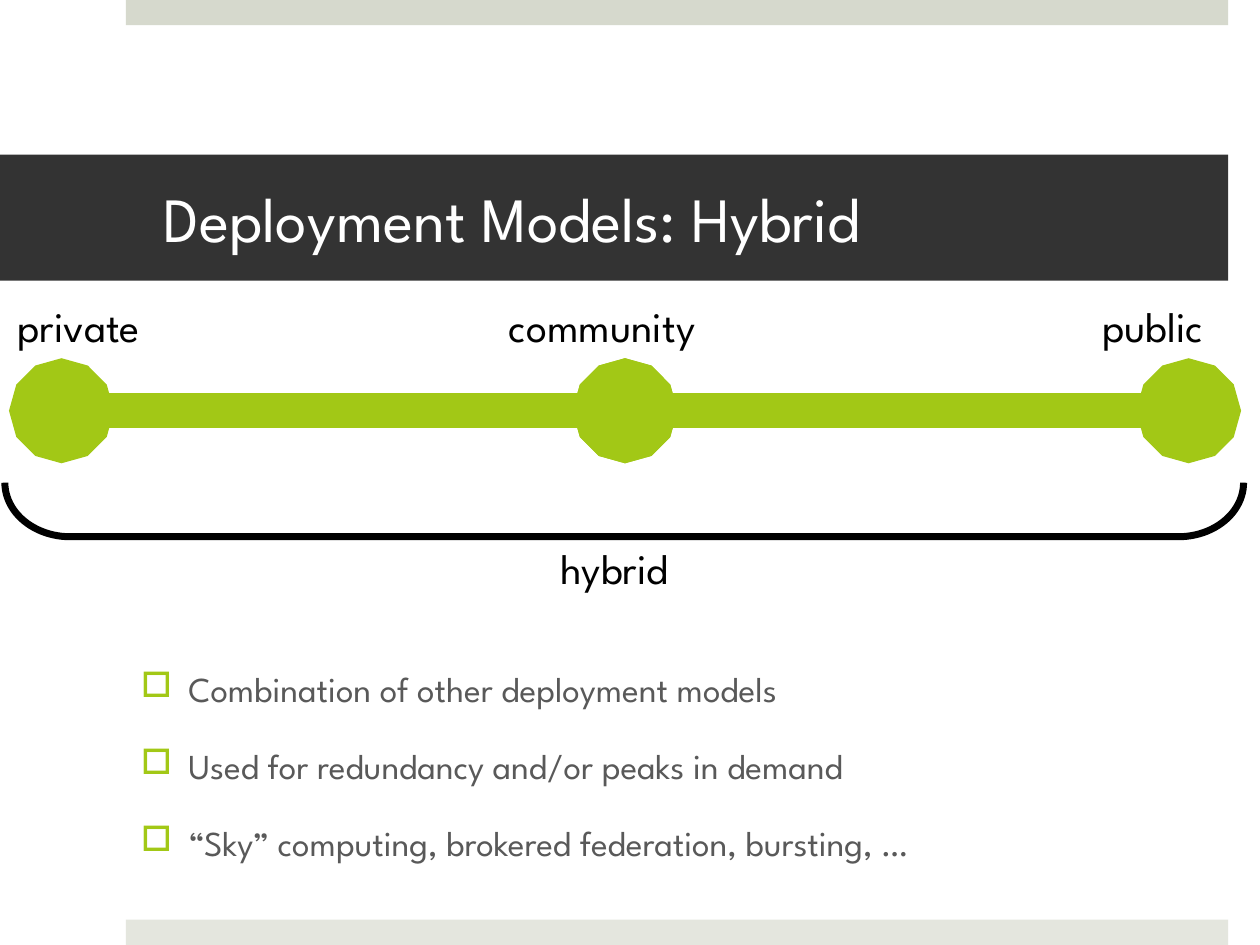
"""Build the slide on the hybrid deployment model."""
import lxml.etree
import pptx
import pptx.dml.color
import pptx.enum.shapes
import pptx.enum.text
import pptx.oxml.ns
import pptx.util

Cm = pptx.util.Cm
Pt = pptx.util.Pt
RGBColor = pptx.dml.color.RGBColor
Shape = pptx.enum.shapes.MSO_SHAPE
qn = pptx.oxml.ns.qn

GREEN = RGBColor(0xA2, 0xC8, 0x16)
DARK = RGBColor(0x33, 0x33, 0x33)
GREY = RGBColor(0x59, 0x59, 0x59)
TOP_BAR = RGBColor(0xD6, 0xD9, 0xCD)
BOTTOM_BAR = RGBColor(0xE4, 0xE6, 0xDE)
WHITE = RGBColor(0xFF, 0xFF, 0xFF)
BLACK = RGBColor(0x00, 0x00, 0x00)
FONT_NAME = "League Spartan"


def set_values(target, values):
    for name, value in values.items():
        setattr(target, name, value)


def write_text(paragraph, text, size, color):
    run = paragraph.add_run()
    run.text = text
    set_values(run.font, {"name": FONT_NAME, "size": Pt(size)})
    run.font.color.rgb = color


presentation = pptx.Presentation()
set_values(presentation, {"slide_width": Cm(25.4), "slide_height": Cm(19.05)})
slide = presentation.slides.add_slide(presentation.slide_layouts[6])

bars = [
    (2.54, 0, 22.22, 0.51, TOP_BAR),
    (2.54, 18.54, 22.22, 0.51, BOTTOM_BAR),
    (0, 3.12, 24.76, 2.54, DARK),
]
for left, top, width, height, color in bars:
    bar = slide.shapes.add_shape(Shape.RECTANGLE, Cm(left), Cm(top), Cm(width), Cm(height))
    bar.shadow.inherit = False
    bar.fill.solid()
    bar.fill.fore_color.rgb = color
    bar.line.fill.background()

title_frame = bar.text_frame
set_values(title_frame, {
    "margin_left": Cm(3.3),
    "margin_right": Cm(0.76),
    "margin_top": Cm(0.13),
    "margin_bottom": Cm(0.13),
    "vertical_anchor": pptx.enum.text.MSO_ANCHOR.MIDDLE,
    "word_wrap": True,
})
title_frame.paragraphs[0].alignment = pptx.enum.text.PP_ALIGN.LEFT
write_text(title_frame.paragraphs[0], "Deployment Models: Hybrid", 36, WHITE)

points = [
    "Combination of other deployment models",
    "Used for redundancy and/or peaks in demand",
    "“Sky” computing, brokered federation, bursting, …",
]
body_frame = slide.shapes.add_textbox(Cm(2.59), Cm(13.34), Cm(23.95), Cm(5.18)).text_frame
body_frame.word_wrap = True
for index, point in enumerate(points):
    paragraph = body_frame.add_paragraph() if index else body_frame.paragraphs[0]
    paragraph.space_before = Pt(20)
    write_text(paragraph, point, 20, GREY)
    properties = paragraph._p.get_or_add_pPr()
    properties.set("marL", str(Cm(0.96)))
    properties.set("indent", str(-Cm(0.96)))
    bullet_color = lxml.etree.SubElement(properties, qn("a:buClr"))
    lxml.etree.SubElement(bullet_color, qn("a:srgbClr"), val=str(GREEN))
    lxml.etree.SubElement(properties, qn("a:buChar"), char="□")

stops = [1.24, 12.6, 23.96]
for start, end in zip(stops, stops[1:]):
    connector = slide.shapes.add_connector(
        pptx.enum.shapes.MSO_CONNECTOR.STRAIGHT, Cm(start), Cm(8.28), Cm(end), Cm(8.28))
    connector.line.width = Pt(20)
    connector.line.color.rgb = GREEN
    line_properties = connector.line._get_or_add_ln()
    for end_tag in ("a:headEnd", "a:tailEnd"):
        lxml.etree.SubElement(line_properties, qn(end_tag), type="oval")
    lxml.etree.SubElement(connector._element.spPr, qn("a:effectLst"))

labels = [
    ("private", 0.1, 5.94, 3.43),
    ("community", 10.01, 5.94, 5.18),
    ("public", 21.97, 5.94, 3.1),
    ("hybrid", 11.05, 10.82, 3.1),
]
for text, left, top, width in labels:
    label_frame = slide.shapes.add_textbox(Cm(left), Cm(top), Cm(width), Cm(1.27)).text_frame
    set_values(label_frame, {
        "word_wrap": False,
        "auto_size": pptx.enum.text.MSO_AUTO_SIZE.SHAPE_TO_FIT_TEXT,
    })
    write_text(label_frame.paragraphs[0], text, 24, BLACK)

bracket = slide.shapes.add_shape(Shape.LEFT_BRACKET, Cm(12.04), Cm(-2.21), Cm(1.09), Cm(24.97))
bracket.rotation = 270
bracket.adjustments[0] = 1.21
bracket.shadow.inherit = False
bracket.fill.background()
bracket.line.width = Pt(4)
bracket.line.color.rgb = BLACK

presentation.save("out.pptx")
